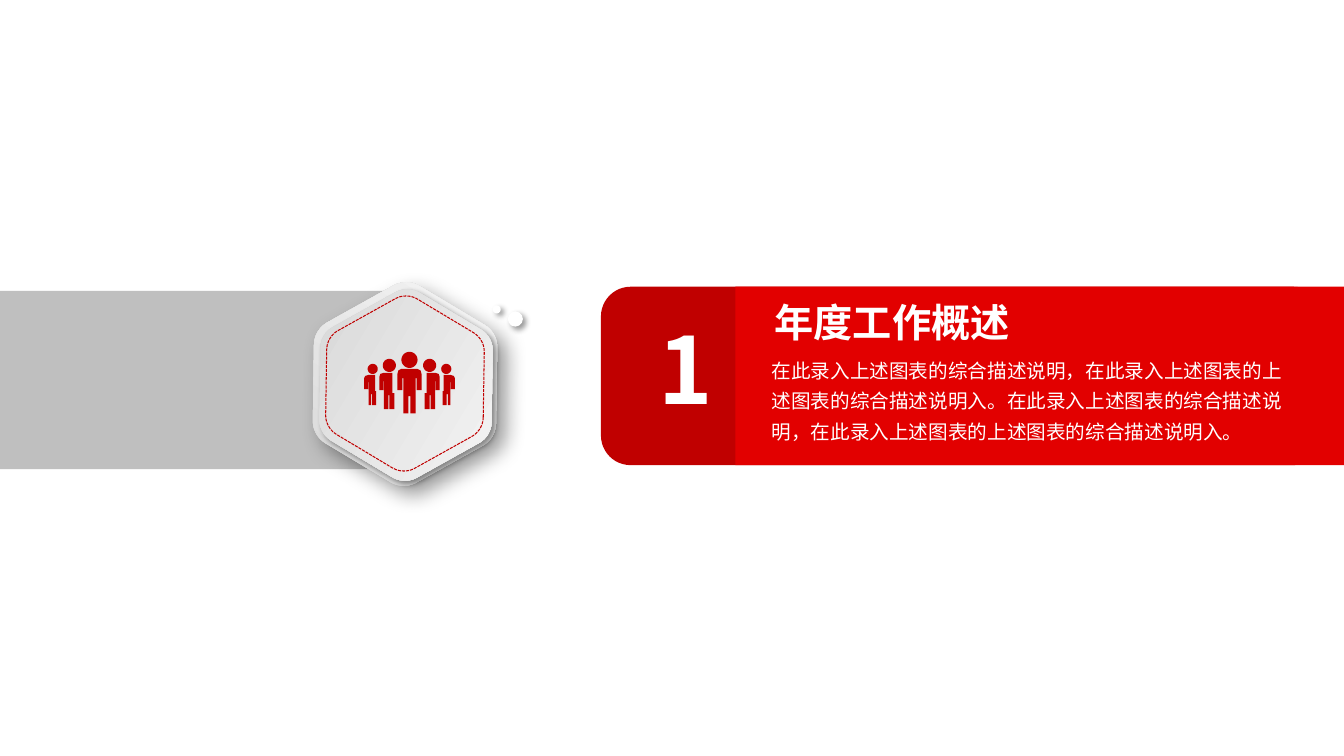
from math import cos, radians, sin

from lxml.etree import SubElement
from pptx import Presentation
from pptx.dml.color import RGBColor
from pptx.enum.dml import MSO_LINE
from pptx.enum.shapes import MSO_SHAPE
from pptx.enum.text import MSO_ANCHOR, PP_ALIGN
from pptx.oxml.ns import qn
from pptx.util import Inches, Pt

# Grid of square cells: 133.4 columns by 75 rows
CELL = Inches(0.1)
COLUMNS, ROWS = 133.4, 75
FONT = "Noto Sans CJK SC"
RED, DARK_RED, WHITE, GREY = "E20000", "C00000", "FFFFFF", "BFBFBF"


def cells(*counts):
    return [round(count * CELL) for count in counts]


def paint(shape, colours, angle=0, shadow=None):
    """Fill with no, one or two colours; shadow is (blur, distance) in points."""
    if not colours:
        shape.fill.background()
    elif len(colours) == 1:
        shape.fill.solid()
        shape.fill.fore_color.rgb = RGBColor.from_string(colours[0])
    else:
        shape.fill.gradient()
        shape.fill.gradient_angle = angle
        for stop, colour in zip(shape.fill.gradient_stops, colours):
            stop.color.rgb = RGBColor.from_string(colour)
    shape.line.fill.background()
    shape.shadow.inherit = False
    if shadow:
        blur, distance = shadow
        effects = shape._element.spPr.find(qn("a:effectLst"))
        outer = SubElement(effects, qn("a:outerShdw"), blurRad=str(Pt(blur)),
                           dist=str(Pt(distance)), dir=str(45 * 60000),
                           algn="tl", rotWithShape="0")
        black = SubElement(outer, qn("a:srgbClr"), val="000000")
        SubElement(black, qn("a:alpha"), val="40000")


deck = Presentation()
deck.slide_width, deck.slide_height = cells(COLUMNS, ROWS)
slide = deck.slides.add_slide(deck.slide_layouts[6])
shapes = slide.shapes

# Bands
bands = [
    (MSO_SHAPE.RECTANGLE, 0, 28.85, 40.7, GREY),
    (MSO_SHAPE.ROUNDED_RECTANGLE, 59.65, 28.45, 71.7, DARK_RED),
    (MSO_SHAPE.RECTANGLE, 73, 28.45, COLUMNS - 73, RED),
]
for preset, left, top, width, colour in bands:
    paint(shapes.add_shape(preset, *cells(left, top, width, 17.7)), [colour])

# Badge: rounded hexagons, each corner an arc of 60 degrees
SILVER = ["D3D3D3", "F9F9F9"]
hexagons = [
    (40.2, 38.1, 1, SILVER, 90, (15, 9)),
    (40.3, 38.2, 0.94, SILVER, 0, (4, 3)),
    (40.2, 38.05, 0.86, [], 0, None),
]
for centre_x, centre_y, scale, colours, angle, shadow in hexagons:
    outline = []
    for corner in range(0, 360, 60):
        for turn in range(corner - 30, corner + 31, 6):
            outline.append(cells(
                centre_x + scale * (7.5 * cos(radians(corner)) + 2.6 * cos(radians(turn))),
                centre_y + scale * (7.5 * sin(radians(corner)) + 2.6 * sin(radians(turn)))))
    builder = shapes.build_freeform(*outline[0])
    builder.add_line_segments(outline[1:])
    hexagon = builder.convert_to_shape()
    hexagon.rotation = 30.9
    paint(hexagon, colours, angle, shadow)
stitching = hexagon.line
stitching.color.rgb = RGBColor.from_string(DARK_RED)
stitching.width = Pt(0.75)
stitching.dash_style = MSO_LINE.SQUARE_DOT

# Team: points are (distance from the middle axis, row)
AXIS = 40.65
leader_half = [(0, 36.6), (0.8, 36.6), (1.1, 36.75), (1.2, 37.1), (1.2, 38.7),
               (0.7, 38.7), (0.7, 37.5), (0.6, 37.5), (0.6, 41), (0.1, 41),
               (0.1, 39.3), (0, 39.3)]
colleague = [(1.7, 37), (2.6, 37), (2.9, 37.1), (3, 37.4), (3, 38.7), (2.6, 38.7),
             (2.6, 37.8), (2.55, 37.8), (2.55, 40.6), (2.1, 40.6), (2.1, 39.2),
             (2, 39.2), (2, 40.6), (1.5, 40.6), (1.5, 39), (1.7, 39)]
assistant = [(3.4, 37.2), (4.1, 37.2), (4.4, 37.3), (4.5, 37.5), (4.5, 38.6),
             (4.1, 38.6), (4.1, 37.9), (4.05, 37.9), (4.05, 40.2), (3.8, 40.2),
             (3.8, 39.1), (3.7, 39.1), (3.7, 40.2), (3.3, 40.2), (3.3, 38.8),
             (3.4, 38.8)]
contours = [leader_half + [(-x, y) for x, y in reversed(leader_half)]]
for side in (-1, 1):
    contours += [[(side * x, y) for x, y in body] for body in (colleague, assistant)]
heads = [(0, 35.7, 0.8), (-2, 36.25, 0.65), (2, 36.25, 0.65),
         (-3.65, 36.6, 0.5), (3.65, 36.6, 0.5)]
for offset, row, radius in heads:
    contours.append([(offset + radius * cos(radians(turn)), row + radius * sin(radians(turn)))
                     for turn in range(0, 360, 10)])

team = shapes.build_freeform(*cells(AXIS + contours[0][0][0], contours[0][0][1]))
for contour in contours:
    outline = [cells(AXIS + x, y) for x, y in contour]
    if contour is not contours[0]:
        team.move_to(*outline[0])
    team.add_line_segments(outline[1:])
paint(team.convert_to_shape(), [DARK_RED])

# Dots beside the badge
for left, top, size in [(48.9, 30.3, 0.8), (50.4, 30.9, 1.5)]:
    dot = shapes.add_shape(MSO_SHAPE.OVAL, *cells(left, top, size, size))
    paint(dot, [WHITE], shadow=(4, 3))

# Wording: position, text, size, bold, wrap, alignment, anchor, line spacing, insets
description = ("在此录入上述图表的综合描述说明，在此录入上述图表的上述图表的综合描述说明入。"
               "在此录入上述图表的综合描述说明，在此录入上述图表的上述图表的综合描述说明入。")
wording = [
    ((64.3, 30.4, 7.6, 12.1), "1", 66, True, False,
     PP_ALIGN.CENTER, MSO_ANCHOR.MIDDLE, None, (1, 0.5)),
    ((76.2, 29.2, 29.9, 5.5), "年度工作概述", 28, True, False,
     PP_ALIGN.LEFT, MSO_ANCHOR.MIDDLE, None, (0.7, 0.4)),
    ((75.6, 34.4, 54.1, 10.2), description, 14, False, True,
     PP_ALIGN.LEFT, MSO_ANCHOR.TOP, Pt(21.8), (1, 0.5)),
]
for place, text, size, bold, wrap, alignment, anchor, spacing, insets in wording:
    frame = shapes.add_textbox(*cells(*place)).text_frame
    frame.word_wrap = wrap
    frame.vertical_anchor = anchor
    frame.margin_left, frame.margin_top = cells(*insets)
    frame.margin_right, frame.margin_bottom = cells(*insets)
    paragraph = frame.paragraphs[0]
    paragraph.alignment = alignment
    paragraph.line_spacing = spacing
    run = paragraph.add_run()
    run.text = text
    run.font.size = Pt(size)
    run.font.bold = bold
    run.font.color.rgb = RGBColor.from_string(WHITE)
    run.font.name = FONT
    SubElement(run.font._element, qn("a:ea"), typeface=FONT)

deck.save("out.pptx")
